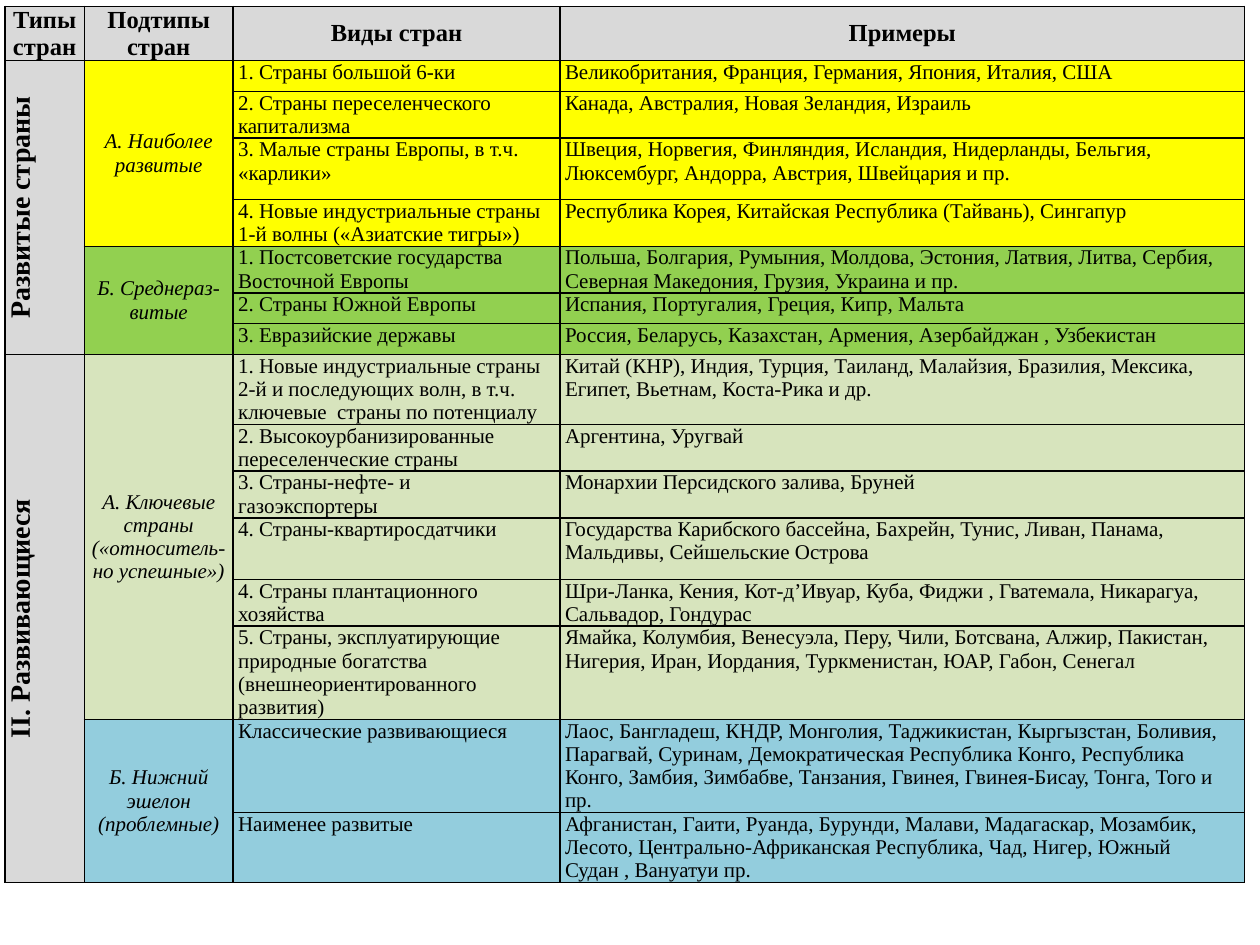
from dataclasses import dataclass

from lxml import etree
from pptx import Presentation
from pptx.dml.color import RGBColor
from pptx.enum.text import MSO_ANCHOR, PP_ALIGN
from pptx.oxml.ns import qn
from pptx.table import Table, _Cell
from pptx.util import Cm, Pt

CENTER, LEFT = PP_ALIGN.CENTER, PP_ALIGN.LEFT
MIDDLE, TOP = MSO_ANCHOR.MIDDLE, MSO_ANCHOR.TOP

COLORS = {
    "black": "000000",
    "gray": "D9D9D9",
    "yellow": "FFFF00",
    "green": "92D050",
    "olive": "D7E4BD",
    "blue": "93CDDD",
}
FONT = "Times New Roman"
COL_WIDTHS = [1.6, 3, 6.59, 13.8]
ROW_HEIGHTS = [0.36, 0.62, 0.69, 1.24, 0.92, 0.92, 0.62, 0.62,
               0.92, 0.92, 0.92, 1.24, 0.92, 0.92, 1.85, 1.24]
HEADERS = ["Типы стран", "Подтипы стран", "Виды стран", "Примеры"]


@dataclass(frozen=True)
class Subtype:
    name: str
    color: str
    kinds: list[tuple[str, str]]


@dataclass(frozen=True)
class CountryType:
    name: str
    subtypes: list[Subtype]


@dataclass(frozen=True)
class TextStyle:
    size: int = 12
    bold: bool = False
    italic: bool = False
    align: PP_ALIGN = LEFT
    anchor: MSO_ANCHOR = TOP
    vertical: bool = False


HEADER = TextStyle(14, bold=True, align=CENTER, anchor=MIDDLE)
TYPE = TextStyle(16, bold=True, align=CENTER, vertical=True)
SUBTYPE = TextStyle(italic=True, align=CENTER, anchor=MIDDLE)
BODY = TextStyle()

COUNTRY_TYPES = [
    CountryType("Развитые страны", [
        Subtype("А. Наиболее развитые", "yellow", [
            ("1. Страны большой 6-ки",
             "Великобритания, Франция, Германия, Япония, Италия, США"),
            ("2. Страны переселенческого капитализма",
             "Канада, Австралия, Новая Зеландия, Израиль"),
            ("3. Малые страны Европы, в т.ч. «карлики»",
             "Швеция, Норвегия, Финляндия, Исландия, Нидерланды, Бельгия, "
             "Люксембург, Андорра, Австрия, Швейцария и пр."),
            ("4. Новые индустриальные страны 1-й волны («Азиатские тигры»)",
             "Республика Корея, Китайская Республика (Тайвань), Сингапур"),
        ]),
        Subtype("Б. Среднераз-витые", "green", [
            ("1. Постсоветские государства Восточной Европы",
             "Польша, Болгария, Румыния, Молдова, Эстония, Латвия, Литва, Сербия, "
             "Северная Македония, Грузия, Украина и пр."),
            ("2. Страны Южной Европы",
             "Испания, Португалия, Греция, Кипр, Мальта"),
            ("3. Евразийские державы",
             "Россия, Беларусь, Казахстан, Армения, Азербайджан , Узбекистан"),
        ]),
    ]),
    CountryType("II. Развивающиеся", [
        Subtype("А. Ключевые страны («относитель-но успешные»)", "olive", [
            ("1. Новые индустриальные страны 2-й и последующих волн, в т.ч. "
             "ключевые  страны по потенциалу",
             "Китай (КНР), Индия, Турция, Таиланд, Малайзия, Бразилия, Мексика, "
             "Египет, Вьетнам, Коста-Рика и др."),
            ("2. Высокоурбанизированные переселенческие страны",
             "Аргентина, Уругвай"),
            ("3. Страны-нефте- и газоэкспортеры",
             "Монархии Персидского залива, Бруней"),
            ("4. Страны-квартиросдатчики",
             "Государства Карибского бассейна, Бахрейн, Тунис, Ливан, Панама, "
             "Мальдивы, Сейшельские Острова"),
            ("4. Страны плантационного хозяйства",
             "Шри-Ланка, Кения, Кот-д’Ивуар, Куба, Фиджи , Гватемала, Никарагуа, "
             "Сальвадор, Гондурас"),
            ("5. Страны, эксплуатирующие природные богатства "
             "(внешнеориентированного развития)",
             "Ямайка, Колумбия, Венесуэла, Перу, Чили, Ботсвана, Алжир, Пакистан, "
             "Нигерия, Иран, Иордания, Туркменистан, ЮАР, Габон, Сенегал"),
        ]),
        Subtype("Б. Нижний эшелон (проблемные)", "blue", [
            ("Классические развивающиеся",
             "Лаос, Бангладеш, КНДР, Монголия, Таджикистан, Кыргызстан, Боливия, "
             "Парагвай, Суринам, Демократическая Республика Конго, Республика "
             "Конго, Замбия, Зимбабве, Танзания, Гвинея, Гвинея-Бисау, Тонга, Того и пр."),
            ("Наименее развитые",
             "Афганистан, Гаити, Руанда, Бурунди, Малави, Мадагаскар, Мозамбик, "
             "Лесото, Центрально-Африканская Республика, Чад, Нигер, Южный "
             "Судан , Вануатуи пр."),
        ]),
    ]),
]


def rgb(name: str) -> RGBColor:
    return RGBColor.from_string(COLORS[name])


def format_cell(cell: _Cell, color: str) -> None:
    cell.margin_left = cell.margin_right = Cm(0.1)
    cell.margin_top = cell.margin_bottom = 0
    tc_pr = cell._tc.get_or_add_tcPr()
    for side in ("a:lnL", "a:lnR", "a:lnT", "a:lnB"):
        ln = etree.SubElement(tc_pr, qn(side), w=str(Pt(1)))
        fill = etree.SubElement(ln, qn("a:solidFill"))
        etree.SubElement(fill, qn("a:srgbClr"), val=COLORS["black"])
    cell.fill.solid()
    cell.fill.fore_color.rgb = rgb(color)


def write_cell(cell: _Cell, text: str, style: TextStyle) -> None:
    cell.vertical_anchor = style.anchor
    if style.vertical:
        cell._tc.get_or_add_tcPr().set("vert", "vert270")
    p = cell.text_frame.paragraphs[0]
    p.text = text
    p.alignment = style.align
    p.font.name = FONT
    p.font.size = Pt(style.size)
    p.font.bold = style.bold
    p.font.italic = style.italic
    p.font.color.rgb = rgb("black")


def fill_block(table: Table, top: int, col: int, rows: int, color: str,
               text: str, style: TextStyle) -> None:
    for row in range(top, top + rows):
        format_cell(table.cell(row, col), color)
    cell = table.cell(top, col)
    if rows > 1:
        cell.merge(table.cell(top + rows - 1, col))
    write_cell(cell, text, style)


def fill_table(table: Table) -> None:
    for col, header in enumerate(HEADERS):
        fill_block(table, 0, col, 1, "gray", header, HEADER)
    row = 1
    for country_type in COUNTRY_TYPES:
        count = sum(len(subtype.kinds) for subtype in country_type.subtypes)
        fill_block(table, row, 0, count, "gray", country_type.name, TYPE)
        for subtype in country_type.subtypes:
            fill_block(table, row, 1, len(subtype.kinds), subtype.color,
                       subtype.name, SUBTYPE)
            for kind in subtype.kinds:
                for col, text in enumerate(kind, start=2):
                    fill_block(table, row, col, 1, subtype.color, text, BODY)
                row += 1


def main() -> None:
    prs = Presentation()
    prs.slide_width, prs.slide_height = Cm(25.4), Cm(19.05)
    s = prs.slides.add_slide(prs.slide_layouts[6])
    table = s.shapes.add_table(len(ROW_HEIGHTS), len(COL_WIDTHS), Cm(0.1), Cm(0.13),
                               Cm(sum(COL_WIDTHS)), Cm(sum(ROW_HEIGHTS))).table
    table.first_row = table.horz_banding = False
    for column, width in zip(table.columns, COL_WIDTHS):
        column.width = Cm(width)
    for row, height in zip(table.rows, ROW_HEIGHTS):
        row.height = Cm(height)
    fill_table(table)
    prs.save("out.pptx")


if __name__ == "__main__":
    main()
